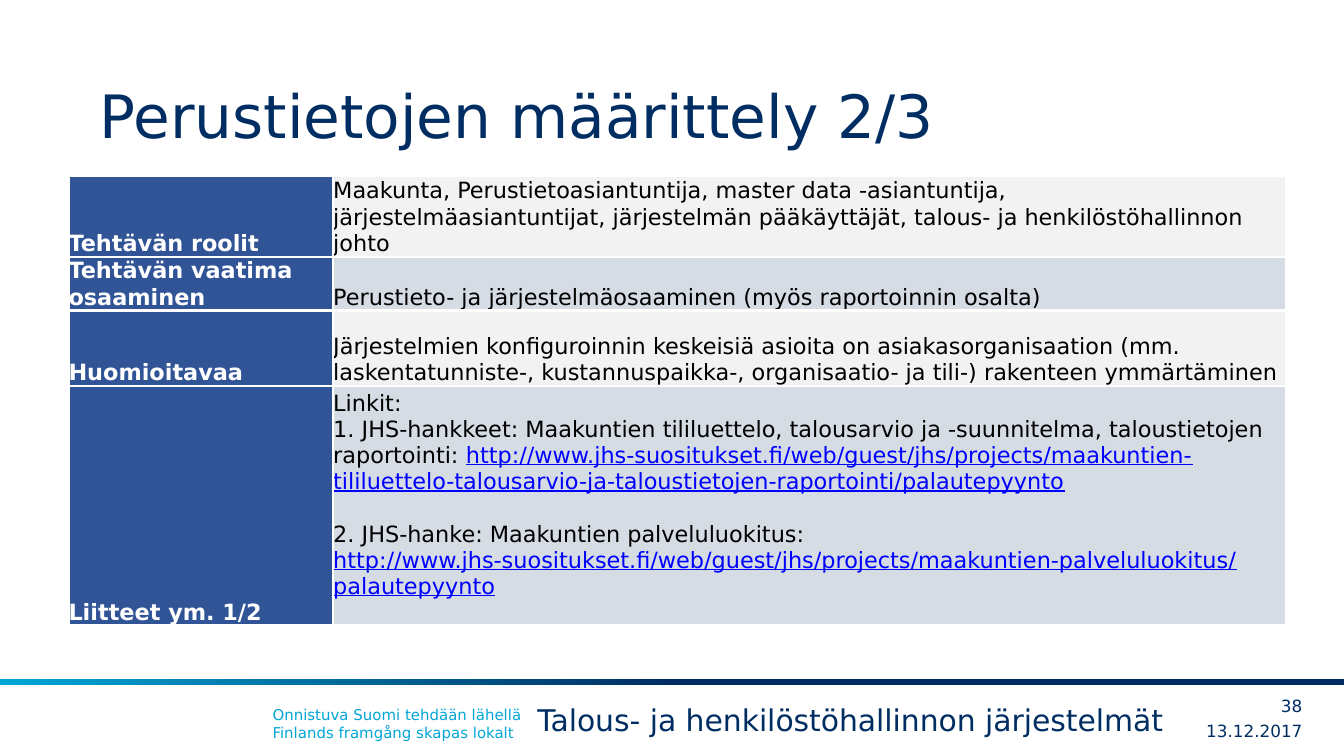
from lxml import etree
from pptx import Presentation
from pptx.dml.color import RGBColor
from pptx.enum.shapes import MSO_SHAPE
from pptx.enum.text import MSO_ANCHOR, MSO_AUTO_SIZE, PP_ALIGN
from pptx.oxml.ns import qn
from pptx.util import Inches, Pt

RECTANGLE = MSO_SHAPE.RECTANGLE
TOP, MIDDLE, BOTTOM = MSO_ANCHOR.TOP, MSO_ANCHOR.MIDDLE, MSO_ANCHOR.BOTTOM
LEFT, RIGHT = PP_ALIGN.LEFT, PP_ALIGN.RIGHT
NO_FIT, GROW = MSO_AUTO_SIZE.NONE, MSO_AUTO_SIZE.SHAPE_TO_FIT_TEXT

FONT = "DejaVu Sans"
NAVY, CYAN, BLUE, LINK = "002E63", "00A6D6", "305496", "0000FF"
WHITE, BLACK, LIGHT, GREY = "FFFFFF", "000000", "F2F2F2", "D6DCE4"
PROJECTS = "http://www.jhs-suositukset.fi/web/guest/jhs/projects/"

TASK_ROWS = [
    (0.35, "Tehtävän roolit", [[
        "Maakunta, Perustietoasiantuntija, master data -asiantuntija, "
        "järjestelmäasiantuntijat, järjestelmän pääkäyttäjät, "
        "talous- ja henkilöstöhallinnon johto"]]),
    (0.39, "Tehtävän vaatima osaaminen", [[
        "Perustieto- ja järjestelmäosaaminen (myös raportoinnin osalta)"]]),
    (0.56, "Huomioitavaa", [[
        "Järjestelmien konfiguroinnin keskeisiä asioita on asiakasorganisaation "
        "(mm. laskentatunniste-, kustannuspaikka-, organisaatio- ja tili-) "
        "rakenteen ymmärtäminen"]]),
    (0.67, "Liitteet ym. 1/2", [
        ["Linkit:", "\n",
         "1. JHS-hankkeet: Maakuntien tililuettelo, talousarvio ja -suunnitelma, "
         "taloustietojen raportointi: ",
         PROJECTS + "maakuntien-tililuettelo-talousarvio-ja-taloustietojen-"
         "raportointi/palautepyynto"],
        ["2. JHS-hanke: Maakuntien palveluluokitus: ",
         PROJECTS + "maakuntien-palveluluokitus/palautepyynto"]]),
]


def rgb(value):
    return RGBColor.from_string(value)


class SlideWriter:
    def __init__(self, slide):
        self.slide = slide

    def run(self, paragraph, text, size, color, bold=False, underline=False):
        if text == "\n":
            paragraph.add_line_break()
            return
        run = paragraph.add_run()
        run.text = text
        font = run.font
        font.name, font.size = FONT, Pt(size)
        font.bold, font.underline = bold, underline
        font.color.rgb = rgb(color)

    def frame(self, frame, anchor, fit, margins):
        frame.word_wrap = True
        frame.auto_size = fit
        frame.vertical_anchor = anchor
        self.margins(frame, *margins)

    def margins(self, target, side, edge):
        target.margin_left = target.margin_right = Inches(side)
        target.margin_top = target.margin_bottom = Inches(edge)

    def title(self, box, text):
        title = self.slide.shapes.title
        title.left, title.top, title.width, title.height = map(Inches, box)
        self.frame(title.text_frame, BOTTOM, NO_FIT, (0, 0.05))
        paragraph = title.text_frame.paragraphs[0]
        paragraph.alignment = LEFT
        self.run(paragraph, text, 32, NAVY)

    def text(self, box, texts, size, color, align=LEFT, anchor=TOP,
             fit=GROW, margins=(0.1, 0.05)):
        frame = self.slide.shapes.add_textbox(*map(Inches, box)).text_frame
        self.frame(frame, anchor, fit, margins)
        paragraph = frame.paragraphs[0]
        paragraph.alignment = align
        for text in texts:
            self.run(paragraph, text, size, color)

    def page_mark(self, box, text):
        self.text(box, [text], 9, NAVY, RIGHT, MIDDLE, NO_FIT, (0, 0))

    def gradient_bar(self, box, stops, angle):
        bar = self.slide.shapes.add_shape(RECTANGLE, *map(Inches, box))
        bar.shadow.inherit = False
        bar.line.fill.background()
        bar.fill.gradient()
        bar.fill.gradient_angle = angle
        for stop, (position, color) in zip(bar.fill.gradient_stops, stops):
            stop.position = position
            stop.color.rgb = rgb(color)

    def borders(self, cell):
        properties = cell._tc.get_or_add_tcPr()
        for index, side in enumerate(("a:lnL", "a:lnR", "a:lnT", "a:lnB")):
            line = etree.Element(qn(side), w=str(Pt(1.5)))
            solid = etree.SubElement(line, qn("a:solidFill"))
            etree.SubElement(solid, qn("a:srgbClr"), val=WHITE)
            properties.insert(index, line)

    def cell(self, cell, fill, paragraphs, color, bold=False):
        cell.fill.solid()
        cell.fill.fore_color.rgb = rgb(fill)
        self.borders(cell)
        self.margins(cell, 0, 0)
        cell.vertical_anchor = BOTTOM
        frame = cell.text_frame
        for index, texts in enumerate(paragraphs):
            paragraph = frame.add_paragraph() if index else frame.paragraphs[0]
            if index:
                paragraph.space_before = Pt(14)
            for text in texts:
                is_link = text.startswith("http")
                self.run(paragraph, text, 12, LINK if is_link else color,
                         bold, is_link)

    def table(self, left, top, widths, height, rows):
        holder = self.slide.shapes.add_table(
            len(rows), len(widths), Inches(left), Inches(top),
            Inches(sum(widths)), Inches(height))
        table = holder.table
        table.first_row = table.horz_banding = False
        for column, width in zip(table.columns, widths):
            column.width = Inches(width)
        for index, (row_height, heading, details) in enumerate(rows):
            table.rows[index].height = Inches(row_height)
            self.cell(table.cell(index, 0), BLUE, [[heading]], WHITE, True)
            self.cell(table.cell(index, 1), GREY if index % 2 else LIGHT,
                      details, BLACK)
        holder.height = Inches(height)
        return table


def main():
    deck = Presentation()
    deck.slide_width = Inches(10)
    deck.slide_height = deck.slide_width * 9 // 16
    writer = SlideWriter(deck.slides.add_slide(deck.slide_layouts[5]))
    writer.gradient_bar((0, 5.05, 10, 0.05), [(0.5, NAVY), (1, CYAN)], 180)
    writer.text((1.93, 5.2, 6.54, 0.37),
                ["Onnistuva Suomi tehdään lähellä", "\n",
                 "Finlands framgång skapas lokalt"], 8, CYAN)
    writer.page_mark((8.7, 5.33, 0.99, 0.22), "13.12.2017")
    writer.page_mark((9.26, 5.14, 0.43, 0.22), "38")
    writer.title((0.74, 0.23, 8.51, 0.94), "Perustietojen määrittely 2/3")
    tasks = writer.table(0.51, 1.31, (1.97, 7.09), 3.2, TASK_ROWS)
    tasks.cell(3, 1).margin_bottom = Inches(0.19)
    writer.text((3.9, 5.17, 5, 0.37),
                ["Talous- ja henkilöstöhallinnon järjestelmät"], 16, NAVY)
    deck.save("out.pptx")


if __name__ == "__main__":
    main()
